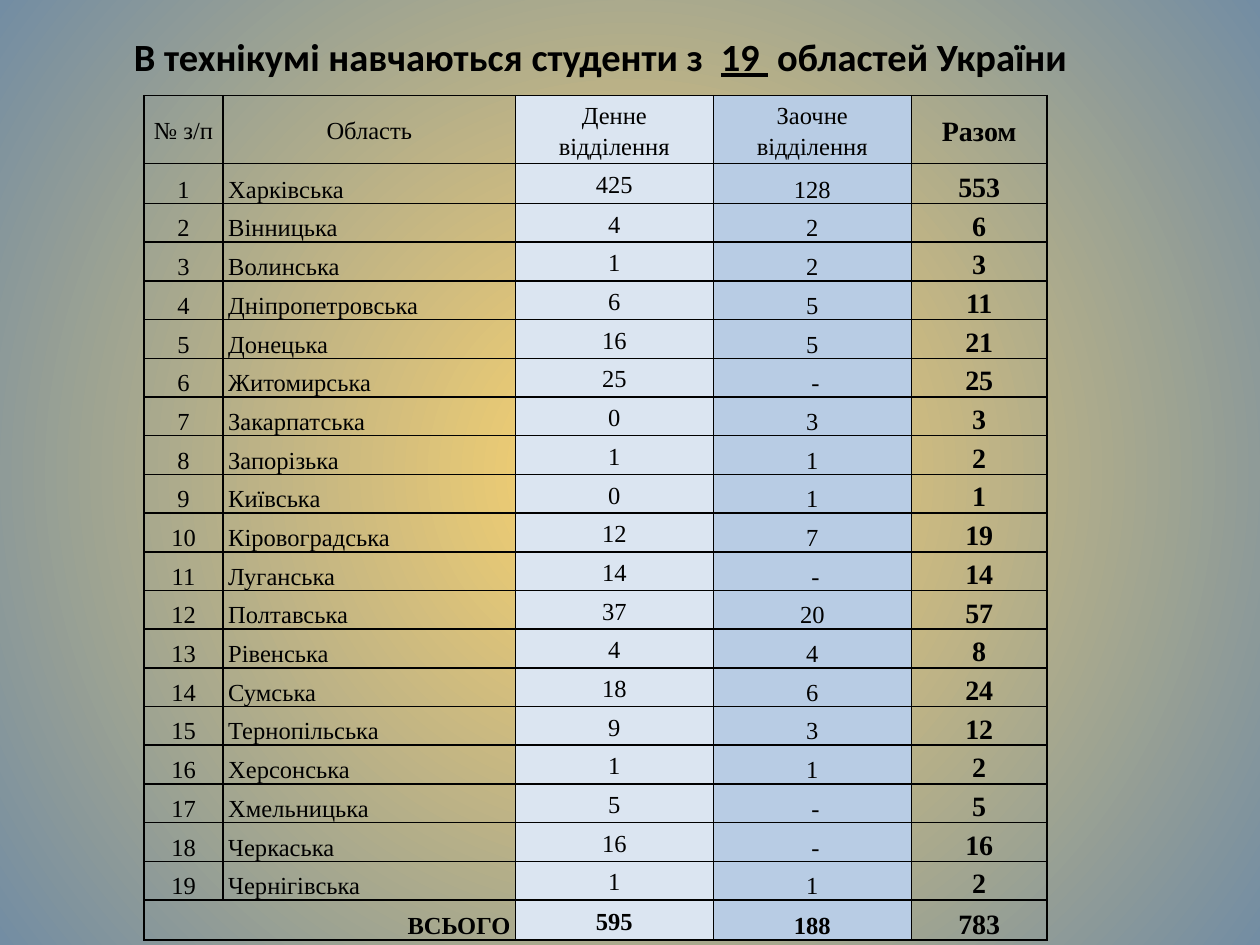
from lxml import etree
from pptx import Presentation
from pptx.dml.color import RGBColor
from pptx.enum.text import MSO_ANCHOR as Anchor, MSO_AUTO_SIZE as AutoSize, PP_ALIGN as Align
from pptx.oxml import parse_xml
from pptx.oxml.ns import nsdecls, qn
from pptx.util import Cm, Pt

COLORS = {
    "glow": "FED46C",
    "edge": "738DA3",
    "ink": "000000",
    "day": "DBE5F1",
    "distance": "B8CCE4",
}
TITLE_FONT = "Calibri"
TABLE_FONT = "Times New Roman"

TITLE = [
    ("В технікумі навчаються студенти з  ", False),
    ("19 ", True),
    (" областей України", False),
]
HEADINGS = ["№ з/п", "Область", "Денне\nвідділення", "Заочне\nвідділення", "Разом"]
REGIONS = [
    ("Харківська", 425, 128),
    ("Вінницька", 4, 2),
    ("Волинська", 1, 2),
    ("Дніпропетровська", 6, 5),
    ("Донецька", 16, 5),
    ("Житомирська", 25, None),
    ("Закарпатська", 0, 3),
    ("Запорізька", 1, 1),
    ("Київська", 0, 1),
    ("Кіровоградська", 12, 7),
    ("Луганська", 14, None),
    ("Полтавська", 37, 20),
    ("Рівенська", 4, 4),
    ("Сумська", 18, 6),
    ("Тернопільська", 9, 3),
    ("Херсонська", 1, 1),
    ("Хмельницька", 5, None),
    ("Черкаська", 16, None),
    ("Чернігівська", 1, 1),
]
TOTALS = ["ВСЬОГО", "", "595", "188", "783"]
NO_STUDENTS = " -"

COLUMN_WIDTHS = [1.6, 5.89, 3.99, 3.99, 2.74]
HEADING_HEIGHT, EDGE_HEIGHT, REGION_HEIGHT = 1.19, 0.81, 0.78
COLUMN_FILLS = [None, None, "day", "distance", None]
NAME_COLUMN, DAY_COLUMN, SUM_COLUMN = 1, 2, 4


def rgb(name):
    return RGBColor.from_string(COLORS[name])


def add_run(paragraph, text, font, size, bold):
    run = paragraph.add_run()
    run.text = text
    run.font.name = font
    run.font.size = Pt(size)
    run.font.bold = bold
    run.font.color.rgb = rgb("ink")
    return run


def paint_background(slide):
    fill = slide.background.fill
    fill.gradient()
    for stop, name, position in zip(fill.gradient_stops, ("glow", "edge"), (0, 1)):
        stop.color.rgb = rgb(name)
        stop.position = position
    gradient = slide.background._cSld.find(".//" + qn("a:gradFill"))
    gradient.remove(gradient.find(qn("a:lin")))
    circle = etree.SubElement(gradient, qn("a:path"), {"path": "circle"})
    center = {side: "50000" for side in "ltrb"}
    etree.SubElement(circle, qn("a:fillToRect"), center)


def place_title(slide, left, top, width, height):
    title = slide.shapes.title
    title.left, title.top, title.width, title.height = map(Cm, (left, top, width, height))
    frame = title.text_frame
    frame.word_wrap = True
    frame.auto_size = AutoSize.SHAPE_TO_FIT_TEXT
    frame.vertical_anchor = Anchor.TOP
    paragraph = frame.paragraphs[0]
    paragraph.alignment = Align.CENTER
    for text, underlined in TITLE:
        add_run(paragraph, text, TITLE_FONT, 22, True).font.underline = underlined


def draw_borders(cell):
    properties = cell._tc.get_or_add_tcPr()
    for order, side in enumerate(("lnL", "lnR", "lnT", "lnB")):
        properties.insert(order, parse_xml(
            f'<a:{side} {nsdecls("a")} w="{Pt(1)}"><a:solidFill>'
            f'<a:srgbClr val="{COLORS["ink"]}"/></a:solidFill></a:{side}>'))


def fill_cell(cell, text, size, bold, align, anchor, fill):
    cell.margin_left = cell.margin_right = Cm(0.1)
    cell.margin_top = cell.margin_bottom = 0
    cell.vertical_anchor = anchor
    if fill:
        cell.fill.solid()
        cell.fill.fore_color.rgb = rgb(fill)
    else:
        cell.fill.background()
    draw_borders(cell)
    frame = cell.text_frame
    for index, line in enumerate(text.split("\n") if text else []):
        paragraph = frame.add_paragraph() if index else frame.paragraphs[0]
        paragraph.alignment = align
        paragraph.line_spacing = 1.15
        add_run(paragraph, line, TABLE_FONT, size, bold)


def region_row(number, region):
    name, day, distance = region
    shown = NO_STUDENTS if distance is None else str(distance)
    return [str(number), name, str(day), shown, str(day + (distance or 0))]


def place_regions_table(slide, left, top):
    rows = [HEADINGS, *(region_row(n, r) for n, r in enumerate(REGIONS, 1)), TOTALS]
    last = len(rows) - 1
    heights = [HEADING_HEIGHT, EDGE_HEIGHT, *[REGION_HEIGHT] * (last - 2), EDGE_HEIGHT]
    table = slide.shapes.add_table(
        len(rows), len(COLUMN_WIDTHS), Cm(left), Cm(top),
        Cm(sum(COLUMN_WIDTHS)), Cm(sum(heights))).table
    table.first_row = table.horz_banding = False
    for column, width in zip(table.columns, COLUMN_WIDTHS):
        column.width = Cm(width)
    for r, (texts, height) in enumerate(zip(rows, heights)):
        table.rows[r].height = Cm(height)
        for c, text in enumerate(texts):
            is_sum = c == SUM_COLUMN
            align = Align.CENTER
            if r == last and c < DAY_COLUMN:
                align = Align.RIGHT
            elif r and c == NAME_COLUMN:
                align = Align.LEFT
            anchor = Anchor.MIDDLE if r == 0 or c == DAY_COLUMN else Anchor.BOTTOM
            fill_cell(table.cell(r, c), text, 16 if is_sum else 14,
                      is_sum or r == last, align, anchor, COLUMN_FILLS[c])
    table.cell(last, 0).merge(table.cell(last, NAME_COLUMN))


def main():
    deck = Presentation()
    deck.slide_width, deck.slide_height = Cm(25.4), Cm(19.05)
    slide = deck.slides.add_slide(deck.slide_layouts[5])
    paint_background(slide)
    place_title(slide, 2.11, 0.53, 19.99, 1.19)
    place_regions_table(slide, 2.9, 1.93)
    deck.save("out.pptx")


if __name__ == "__main__":
    main()
